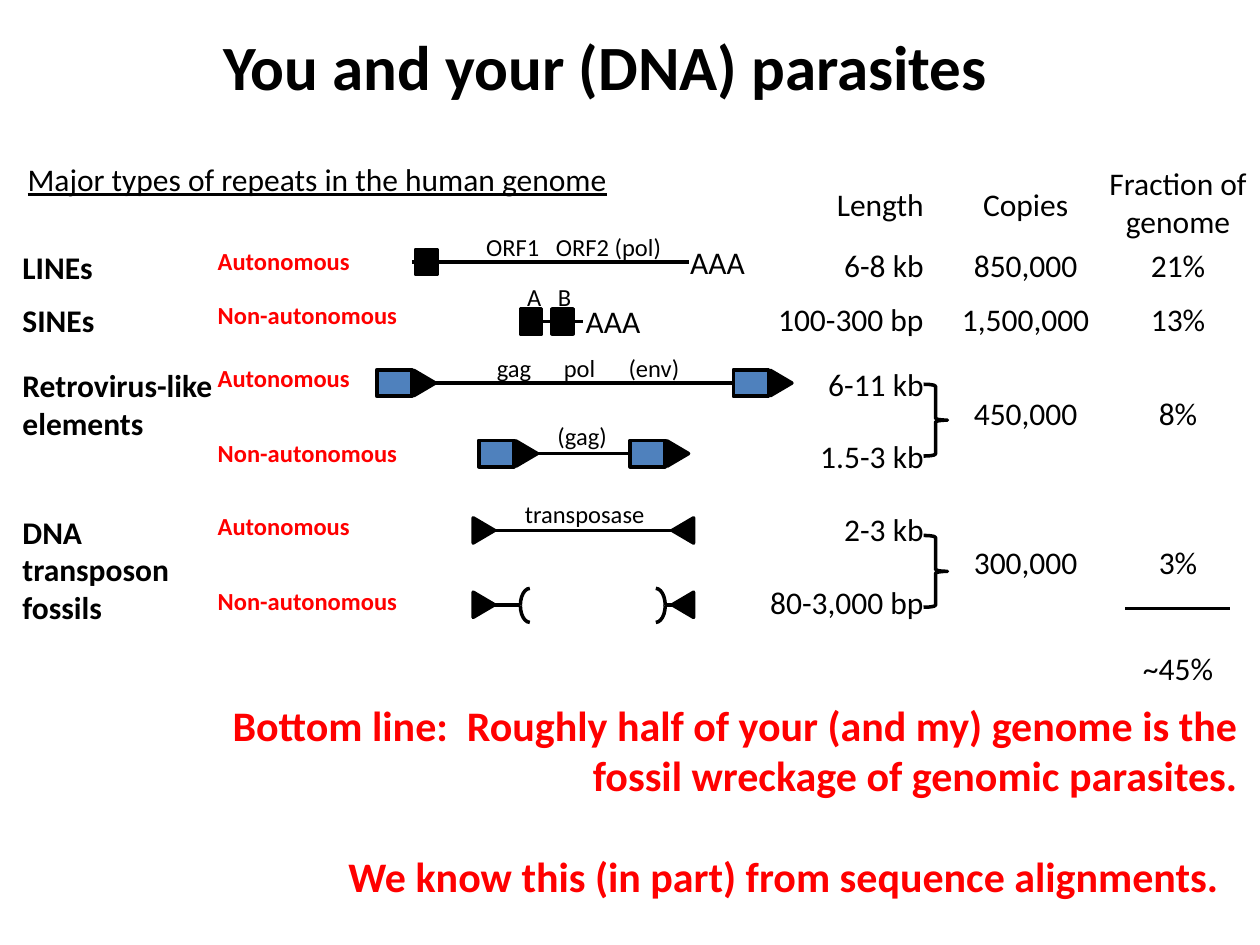
from dataclasses import dataclass
from typing import Any

from lxml.etree import SubElement
from pptx import Presentation
from pptx.dml.color import RGBColor as Rgb
from pptx.enum.shapes import MSO_CONNECTOR as Link, MSO_SHAPE as Kind
from pptx.enum.text import MSO_ANCHOR as Anchor, MSO_AUTO_SIZE as Auto, PP_ALIGN as Align
from pptx.oxml.ns import qn
from pptx.util import Inches, Pt


@dataclass(frozen=True)
class Theme:
    font: str = "Calibri"
    ink: Rgb = Rgb(0, 0, 0)
    red: Rgb = Rgb(255, 0, 0)
    blue: Rgb = Rgb(0x4F, 0x81, 0xBD)
    title: int = 36
    claim: int = 24
    body: int = 18
    small: int = 14
    line: int = 2


THEME = Theme()


def write(para, words, size=THEME.body, color=THEME.ink, bold=False, under=False):
    run = para.add_run()
    run.text = words
    font = run.font
    font.name, font.size, font.bold = THEME.font, Pt(size), bold
    font.underline = under
    font.color.rgb = color


@dataclass
class Area:
    """A region whose parts are placed from its top left corner."""
    slide: Any
    left: float
    top: float

    def spot(self, x, y):
        return Inches(self.left + x), Inches(self.top + y)

    def text(self, x, y, wide, high, lines, align=Align.LEFT, wrap=False, **look):
        box = self.slide.shapes.add_textbox(*self.spot(x, y), Inches(wide), Inches(high))
        frame = box.text_frame
        frame.word_wrap = wrap
        for i, words in enumerate(lines):
            para = frame.add_paragraph() if i else frame.paragraphs[0]
            para.alignment = align
            write(para, words, **look)
        return frame

    def line(self, x, y, end):
        rule = self.slide.shapes.add_connector(
            Link.STRAIGHT, *self.spot(x, y), *self.spot(end, y))
        rule.line.color.rgb = THEME.ink
        rule.line.width = Pt(THEME.line)
        SubElement(rule._element.spPr, qn("a:effectLst"))

    def shape(self, kind, x, y, wide, high, fill=None, turn=0):
        part = self.slide.shapes.add_shape(
            kind, *self.spot(x, y), Inches(wide), Inches(high))
        part.shadow.inherit = False
        part.rotation = turn
        part.line.color.rgb = THEME.ink
        part.line.width = Pt(THEME.line)
        if fill is None:
            part.fill.background()
        else:
            part.fill.solid()
            part.fill.fore_color.rgb = fill
        return part

    def tip(self, x, y, turn=90):
        self.shape(Kind.ISOSCELES_TRIANGLE, x, y - 0.085, 0.2, 0.17, THEME.ink, turn)

    def block(self, x, y):
        self.shape(Kind.RECTANGLE, x, y - 0.1, 0.17, 0.2, THEME.ink)

    def repeat(self, x, y):
        """Long terminal repeat: blue box with an arrow tip."""
        self.shape(Kind.RECTANGLE, x, y - 0.105, 0.28, 0.21, THEME.blue)
        self.tip(x + 0.28, y)

    def genes(self, y, names):
        """Small labels, each centred on its own x."""
        for x, name in names:
            wide = 0.3 + 0.09 * len(name)
            self.text(x - wide / 2, y, wide, 0.34, [name], Align.CENTER, size=THEME.small)

    def curve(self, x, y, left):
        """Round bracket made of two quarter arcs."""
        for low in (True, False):
            frame = self.shape(Kind.ARC, x, y, 0.15, 0.27)._element.spPr.xfrm
            if left:
                frame.set("flipH", "1")
            if low:
                frame.set("flipV", "1")


def add_title(slide, left, top):
    head = slide.shapes.title
    head.left, head.top = Inches(left), Inches(top)
    head.width, head.height = Inches(6.33), Inches(0.71)
    frame = head.text_frame
    frame.auto_size, frame.vertical_anchor = Auto.NONE, Anchor.TOP
    para = frame.paragraphs[0]
    para.alignment = Align.LEFT
    write(para, "You and your (DNA) parasites", THEME.title, bold=True)


def add_names(slide, left, top):
    area = Area(slide, left, top)
    area.text(0.04, 0, 5.42, 0.4, ["Major types of repeats in the human genome"],
              wrap=True, under=True)
    # Families
    for y, wide, lines in ((0.7, 0.76, ["LINEs"]), (1.12, 0.78, ["SINEs"]),
                           (1.64, 1.72, ["Retrovirus-like", "elements"]),
                           (2.8, 1.37, ["DNA", "transposon", "fossils"])):
        area.text(0, y, wide, 0.1 + 0.3 * len(lines), lines, bold=True)
    # Modes, which take turns
    modes = (("Autonomous", 1.26), ("Non-autonomous", 1.63))
    for i, y in enumerate((0.68, 1.11, 1.61, 2.21, 2.79, 3.38)):
        mode, wide = modes[i % 2]
        area.text(1.55, y, wide, 0.34, [mode], size=THEME.small,
                  color=THEME.red, bold=True)


def add_maps(slide, left, top):
    area = Area(slide, left, top)
    # LINE
    area.line(0.28, 0.29, 2.48)
    area.block(0.31, 0.29)
    area.genes(0, ((1.08, "ORF1"), (1.84, "ORF2 (pol)")))
    area.text(2.39, 0.09, 0.67, 0.4, ["AAA"], wrap=True)
    # SINE
    area.line(1.21, 0.76, 1.64)
    for x in (1.14, 1.39):
        area.block(x, 0.76)
    area.genes(0.4, ((1.25, "A"), (1.49, "B")))
    area.text(1.56, 0.56, 0.67, 0.4, ["AAA"], wrap=True)
    # Retrovirus-like elements
    for y, start, end in ((1.25, 0, 2.83), (1.81, 0.81, 2.01)):
        area.line(start + 0.28, y, end + 0.04)
        area.repeat(start, y)
        area.repeat(end, y)
    area.genes(0.96, ((1.09, "gag"), (1.61, "pol"), (2.2, "(env)")))
    area.genes(1.5, ((1.63, "(gag)"),))
    # DNA transposons: whole, then with the middle lost
    for y, spans in ((2.42, ((0.83, 2.48),)), (3.01, ((0.83, 1.14), (2.29, 2.48)))):
        for start, end in spans:
            area.line(start, y, end)
        area.tip(0.75, y)
        area.tip(2.33, y, 270)
    area.genes(2.12, ((1.65, "transposase"),))
    area.curve(1.14, 2.88, True)
    area.curve(2.14, 2.88, False)


def add_counts(slide, left, top):
    area = Area(slide, left, top)
    pairs = (1.83, 3.01)
    rows = (0.17, 0.65, 1.08)
    columns = (
        (0, 1.43, Align.RIGHT, (*rows, 1.6, 2.17, 2.75, 3.33),
         ("Length", "6-8 kb", "100-300 bp", "6-11 kb", "1.5-3 kb", "2-3 kb", "80-3,000 bp")),
        (1.53, 1.22, Align.CENTER, (*rows, *pairs),
         ("Copies", "850,000", "1,500,000", "450,000", "300,000")),
        (2.7, 1.3, Align.CENTER, (*rows[1:], *pairs, 3.85),
         ("21%", "13%", "8%", "3%", "~45%")),
    )
    for x, wide, align, tops, words in columns:
        for y, word in zip(tops, words):
            area.text(x, y, wide, 0.4, [word], align)
    area.text(2.7, 0, 1.3, 0.71, ["Fraction of", "genome"], Align.CENTER)
    # Braces and sum line
    for y in (1.8, 3):
        area.shape(Kind.RIGHT_BRACE, 1.33, y, 0.19, 0.57)
    area.line(2.93, 3.58, 3.76)


def add_claim(slide, left, top):
    frame = Area(slide, left, top).text(
        0, 0, 8.93, 1.72,
        ["Bottom line:  Roughly half of your (and my) genome is the "
         "fossil wreckage of genomic parasites.",
         "We know this (in part) from sequence alignments."],
        Align.RIGHT, wrap=True, size=THEME.claim, color=THEME.red, bold=True)
    last = frame.paragraphs[1]
    last.space_before = Pt(29)
    last._p.get_or_add_pPr().set("marR", str(Inches(0.15)))


def main():
    deck = Presentation()
    deck.slide_width, deck.slide_height = Inches(10), Inches(7.5)
    slide = deck.slides.add_slide(deck.slide_layouts[5])
    add_title(slide, 1.67, 0.17)
    add_names(slide, 0.08, 1.22)
    add_maps(slide, 2.99, 1.79)
    add_counts(slide, 6, 1.25)
    add_claim(slide, 0.99, 5.5)
    deck.save("out.pptx")


if __name__ == "__main__":
    main()
